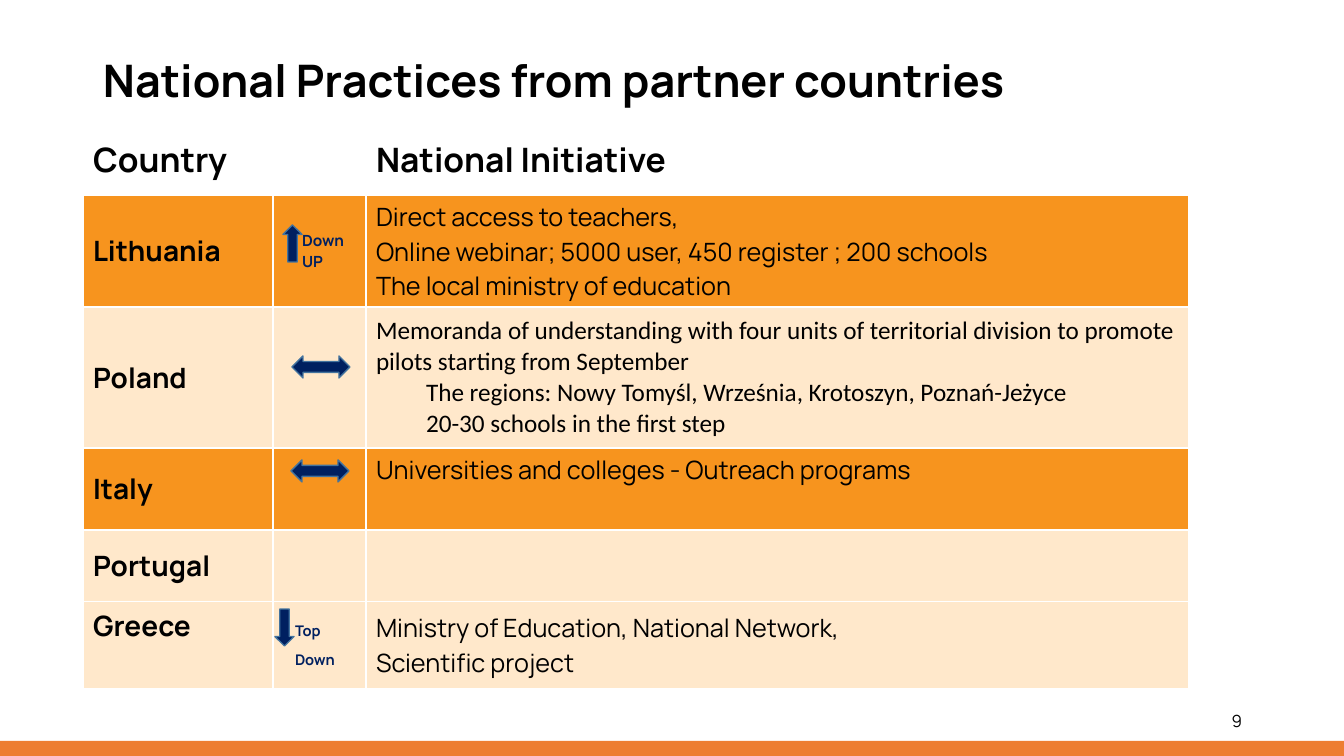
"""Build the slide on national practices from partner countries."""
from dataclasses import dataclass
from itertools import accumulate

from lxml.etree import SubElement
from pptx import Presentation
from pptx.dml.color import RGBColor
from pptx.enum.shapes import MSO_SHAPE
from pptx.enum.text import MSO_ANCHOR, PP_ALIGN
from pptx.oxml.ns import qn
from pptx.util import Emu, Pt


@dataclass(frozen=True)
class Theme:
    """Colours, fonts and type sizes."""
    font: str = "Manrope"
    alt_font: str = "Calibri"
    ink: str = "000000"
    white: str = "FFFFFF"
    navy: str = "002060"
    arrow_line: str = "43739E"
    footer: str = "ED7D31"
    orange: str = "F7941E"
    cream: str = "FFE8CB"
    title: float = 32
    header: float = 24
    country: float = 20
    body: float = 18
    number: float = 12
    up_label: float = 11
    down_label: float = 10.5


T = Theme()
EMU_PER_PX = 914400 / 100.8
SLIDE = (1344, 756)
TITLE = ("National Practices from partner countries", (93, 40, 1016, 87))
PAGE = ("9", (950, 701, 302, 40))
FOOTER_HEIGHT = 15

TABLE_AT = (83, 132)
COLUMNS = (190, 93, 823)
HEADER_HEIGHT = 63
HEADERS = ("Country", "", "National Initiative")

ROWS = [
    dict(country="Lithuania", height=112, fill=T.orange,
         label=(["Down", "UP"], dict(size=T.up_label, indents=(19, 19))),
         initiative=["Direct access to teachers,",
                     "Online webinar; 5000 user, 450 register ; 200 schools",
                     "The local ministry of education"]),
    dict(country="Poland", height=141, fill=T.cream,
         initiative=["Memoranda of understanding with four units of territorial "
                     "division to promote pilots starting from September",
                     "The regions: Nowy Tomyśl, Września, Krotoszyn, Poznań-Jeżyce",
                     "20-30 schools in the first step"],
         style=dict(font=T.alt_font, indents=(0, 50, 50))),
    dict(country="Italy", height=82, fill=T.orange,
         initiative=["Universities and colleges - Outreach programs"],
         style=dict(anchor=MSO_ANCHOR.TOP)),
    dict(country="Portugal", height=72, fill=T.cream, initiative=[]),
    dict(country="Greece", height=87, fill=T.cream,
         country_anchor=MSO_ANCHOR.TOP,
         label=(["Top", "Down"],
                dict(size=T.down_label, indents=(12, 12), gap=6)),
         initiative=["Ministry of Education, National Network,",
                     "Scientific project"]),
]

ARROWS = [
    (MSO_SHAPE.UP_ARROW, (275, 609, 19, 37), 180),
    (MSO_SHAPE.UP_ARROW, (283, 225, 19, 37), 0),
    (MSO_SHAPE.LEFT_RIGHT_ARROW, (292, 356, 58, 22), 0),
    (MSO_SHAPE.LEFT_RIGHT_ARROW, (291, 460, 58, 22), 0),
]


def px(n):
    return Emu(round(n * EMU_PER_PX))


def box(at):
    return [px(n) for n in at]


def rgb(value):
    return RGBColor.from_string(value)


def put_text(tf, lines, *, size, color=T.ink, font=T.font, bold=False,
             align=PP_ALIGN.LEFT, indents=(), gap=0, spacing=None,
             anchor=MSO_ANCHOR.MIDDLE):
    tf.word_wrap = True
    tf.vertical_anchor = anchor
    for i, line in enumerate(lines):
        p = tf.add_paragraph() if i else tf.paragraphs[0]
        p.alignment = align
        if indents:
            pPr = p._p.get_or_add_pPr()
            pPr.set("marL", str(px(indents[i])))
            pPr.set("indent", "0")
        if i and gap:
            p.space_before = Pt(gap)
        if spacing:
            p.line_spacing = spacing
        r = p.add_run()
        r.text = line
        r.font.size = Pt(size)
        r.font.name = font
        r.font.bold = bold
        r.font.color.rgb = rgb(color)


def add_text(slide, lines, at, **fmt):
    tf = slide.shapes.add_textbox(*box(at)).text_frame
    put_text(tf, lines, **fmt)


def add_block(slide, kind, at, fill, line=None, rotation=0):
    s = slide.shapes.add_shape(kind, *box(at))
    s.shadow.inherit = False
    s.rotation = rotation
    s.fill.solid()
    s.fill.fore_color.rgb = rgb(fill)
    if line:
        s.line.color.rgb = rgb(line)
        s.line.width = Pt(1)
    else:
        s.line.fill.background()


def paint_cell(cell, fill):
    tcPr = cell._tc.get_or_add_tcPr()
    for side in ("lnL", "lnR", "lnT", "lnB"):
        ln = SubElement(tcPr, qn(f"a:{side}"), w=str(Pt(1)))
        solid = SubElement(ln, qn("a:solidFill"))
        SubElement(solid, qn("a:srgbClr"), val=T.white)
    cell.fill.solid()
    cell.fill.fore_color.rgb = rgb(fill)


def add_practices(slide):
    heights = [HEADER_HEIGHT] + [row["height"] for row in ROWS]
    size = (list(accumulate(COLUMNS))[-1], list(accumulate(heights))[-1])
    table = slide.shapes.add_table(len(heights), len(COLUMNS),
                                   *box(TABLE_AT + size)).table
    table.horz_banding = False
    for column, width in zip(table.columns, COLUMNS):
        column.width = px(width)
    for row, height in zip(table.rows, heights):
        row.height = px(height)

    for c, name in enumerate(HEADERS):
        cell = table.cell(0, c)
        paint_cell(cell, T.white)
        if name:
            put_text(cell.text_frame, [name], size=T.header, bold=True)
            cell.vertical_anchor = MSO_ANCHOR.TOP
    table.cell(0, 0).merge(table.cell(0, 1))

    for i, row in enumerate(ROWS, 1):
        label, label_style = row.get("label", ([], dict(size=T.up_label)))
        body_style = dict(size=T.body) | row.get("style", {})
        entries = [
            ([row["country"]], dict(size=T.country, bold=True, anchor=row.get(
                "country_anchor", MSO_ANCHOR.MIDDLE))),
            (label, dict(color=T.navy, bold=True) | label_style),
            (row["initiative"], body_style),
        ]
        for c, (lines, style) in enumerate(entries):
            cell = table.cell(i, c)
            paint_cell(cell, row["fill"])
            put_text(cell.text_frame, lines, **style)
            cell.vertical_anchor = style.get("anchor", MSO_ANCHOR.MIDDLE)


def main():
    prs = Presentation()
    prs.slide_width, prs.slide_height = box(SLIDE)
    slide = prs.slides.add_slide(prs.slide_layouts[6])
    width, height = SLIDE
    add_block(slide, MSO_SHAPE.RECTANGLE,
              (0, height - FOOTER_HEIGHT, width, FOOTER_HEIGHT), T.footer)
    title, at = TITLE
    add_text(slide, [title], at, size=T.title, bold=True, spacing=0.9)
    add_practices(slide)
    for kind, at, rotation in ARROWS:
        add_block(slide, kind, at, T.navy, T.arrow_line, rotation)
    number, at = PAGE
    add_text(slide, [number], at, size=T.number, align=PP_ALIGN.RIGHT)
    prs.save("out.pptx")


if __name__ == "__main__":
    main()
